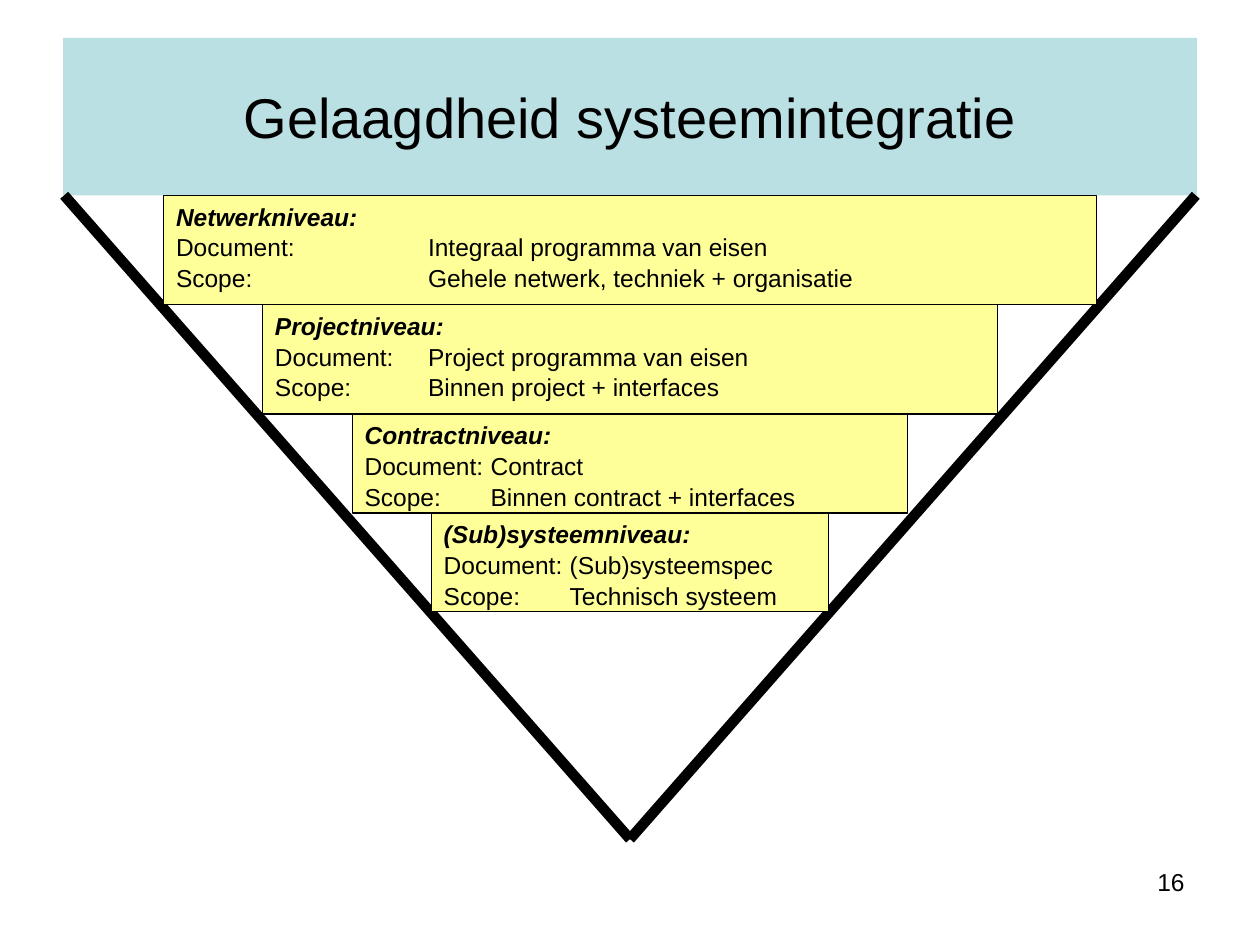
"""Build the slide on the layers of system integration."""
from dataclasses import dataclass

from lxml import etree
from pptx import Presentation
from pptx.dml.color import RGBColor
from pptx.enum.shapes import MSO_CONNECTOR, MSO_SHAPE
from pptx.enum.text import MSO_ANCHOR, MSO_AUTO_SIZE, PP_ALIGN
from pptx.oxml.ns import qn
from pptx.util import Pt

RECT = MSO_SHAPE.RECTANGLE
STRAIGHT = MSO_CONNECTOR.STRAIGHT
TOP, MIDDLE = MSO_ANCHOR.TOP, MSO_ANCHOR.MIDDLE
LEFT, CENTER, RIGHT = PP_ALIGN.LEFT, PP_ALIGN.CENTER, PP_ALIGN.RIGHT


@dataclass(frozen=True)
class Theme:
    font: str = "Arial"
    title_size: int = 32
    text_size: int = 14
    ink: RGBColor = RGBColor(0x00, 0x00, 0x00)
    banner: RGBColor = RGBColor(0xBB, 0xE0, 0xE3)
    layer: RGBColor = RGBColor(0xFF, 0xFF, 0x99)
    border: float = 0.75
    funnel: float = 6


THEME = Theme()
CENTER_X = 360
FUNNEL_TOP, FUNNEL_TIP, FUNNEL_HALF = 111.6, 479.5, 323.3
LAYERS = [
    ("Netwerkniveau:", "Integraal programma van eisen",
     "Gehele netwerk, techniek + organisatie", 533, 62.5, 144),
    ("Projectniveau:", "Project programma van eisen",
     "Binnen project + interfaces", 420, 62.5, 87.5),
    ("Contractniveau:", "Contract",
     "Binnen contract + interfaces", 317.5, 56.5, 72),
    ("(Sub)systeemniveau:", "(Sub)systeemspec",
     "Technisch systeem", 227, 56.5, 72),
]


def set_font(p, size, align=LEFT, strong=False):
    p.alignment = align
    p.font.name = THEME.font
    p.font.size = Pt(size)
    p.font.color.rgb = THEME.ink
    p.font.bold = p.font.italic = strong


def add_tab_stop(p, position):
    tabs = etree.SubElement(p._p.get_or_add_pPr(), qn("a:tabLst"))
    etree.SubElement(tabs, qn("a:tab"), pos=str(Pt(position)), algn="l")


def set_title(s, text):
    sp = s.shapes.title
    sp.left, sp.top, sp.width, sp.height = Pt(36), Pt(21.6), Pt(648), Pt(90)
    sp.fill.solid()
    sp.fill.fore_color.rgb = THEME.banner
    tf = sp.text_frame
    tf.text = text
    tf.auto_size = MSO_AUTO_SIZE.NONE
    tf.vertical_anchor = MIDDLE
    set_font(tf.paragraphs[0], THEME.title_size, CENTER)


def add_funnel_side(s, x):
    line = s.shapes.add_connector(STRAIGHT, Pt(x), Pt(FUNNEL_TOP),
                                  Pt(CENTER_X), Pt(FUNNEL_TIP))
    line.line.color.rgb = THEME.ink
    line.line.width = Pt(THEME.funnel)
    etree.SubElement(line._element.spPr, qn("a:effectLst"))


def add_layer(s, top, name, document, scope, width, height, tab):
    sp = s.shapes.add_shape(RECT, Pt(CENTER_X - width / 2), Pt(top),
                            Pt(width), Pt(height))
    sp.shadow.inherit = False
    sp.fill.solid()
    sp.fill.fore_color.rgb = THEME.layer
    sp.line.color.rgb = THEME.ink
    sp.line.width = Pt(THEME.border)
    tf = sp.text_frame
    tf.word_wrap = True
    tf.vertical_anchor = TOP
    tf.text = f"{name}\nDocument:\t{document}\nScope:\t{scope}"
    for i, p in enumerate(tf.paragraphs):
        add_tab_stop(p, tab)
        p.space_before = Pt(THEME.border)
        set_font(p, THEME.text_size, strong=i == 0)


def add_page_number(s, number):
    tf = s.shapes.add_textbox(Pt(516), Pt(492), Pt(168), Pt(37.5)).text_frame
    tf.word_wrap = True
    tf.text = number
    set_font(tf.paragraphs[0], THEME.text_size, RIGHT)


def main():
    prs = Presentation()
    prs.slide_width, prs.slide_height = Pt(720), Pt(540)
    s = prs.slides.add_slide(prs.slide_layouts[5])
    set_title(s, "Gelaagdheid systeemintegratie")
    for side in (-1, 1):
        add_funnel_side(s, CENTER_X + side * FUNNEL_HALF)
    top = FUNNEL_TOP
    for name, document, scope, width, height, tab in LAYERS:
        add_layer(s, top, name, document, scope, width, height, tab)
        top += height
    add_page_number(s, "16")
    prs.save("out.pptx")


if __name__ == "__main__":
    main()
